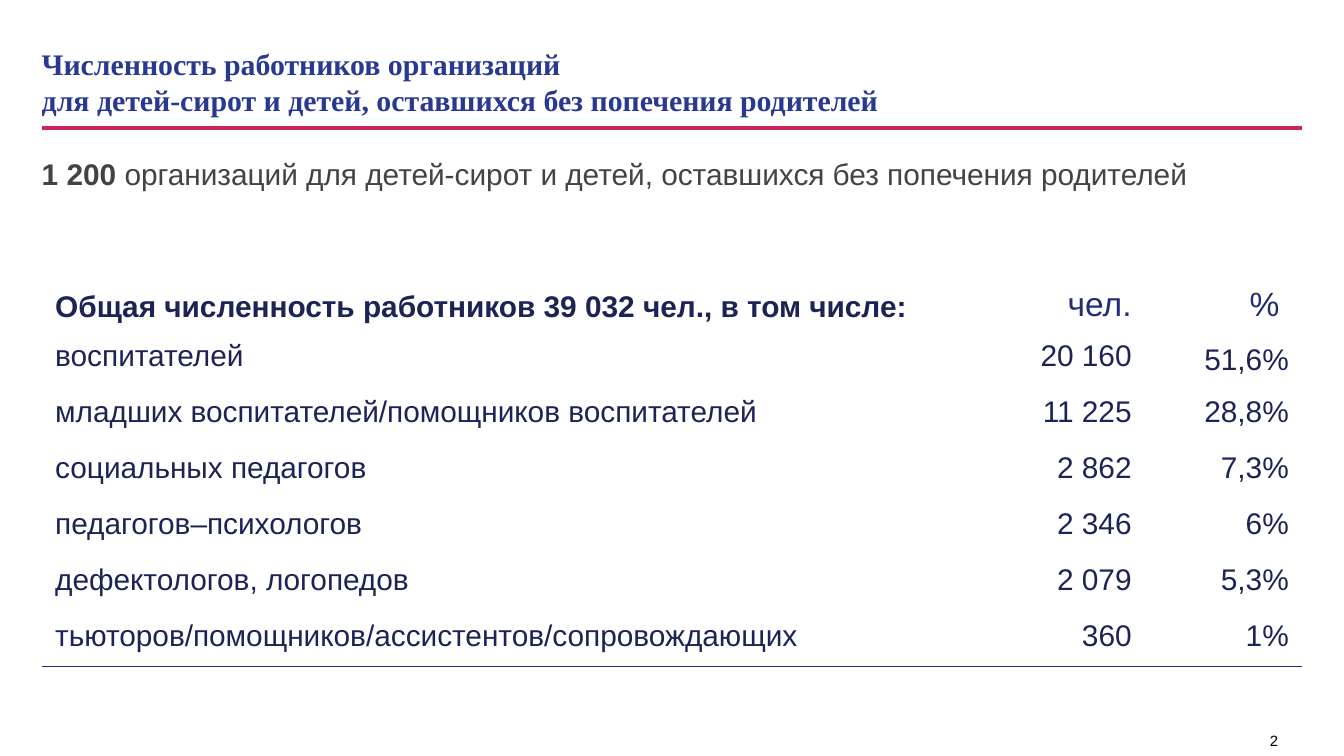
import pptx
import pptx.dml.color
import pptx.enum.shapes
import pptx.enum.text
import pptx.oxml
import pptx.oxml.ns
import pptx.util
from pptx.util import Cm

COLORS = {
    "title": "2A3990",
    "rule": "CB2458",
    "lead": "434343",
    "body": "1C2456",
    "grid": "212D74",
    "number": "000000",
}
ALIGN = pptx.enum.text.PP_ALIGN
ANCHOR = pptx.enum.text.MSO_ANCHOR

HEADER = ["Общая численность работников 39 032 чел., в том числе:", "чел.", "% "]
STAFF = [
    ("воспитателей", "20 160", "51,6%"),
    ("младших воспитателей/помощников воспитателей", "11 225", "28,8%"),
    ("социальных педагогов", "2 862", "7,3%"),
    ("педагогов–психологов", "2 346", "6%"),
    ("дефектологов, логопедов", "2 079", "5,3%"),
    ("тьюторов/помощников/ассистентов/сопровождающих", "360", "1%"),
]


def rgb(name):
    return pptx.dml.color.RGBColor.from_string(COLORS[name])


def style(font, color, size=16, bold=None, face="Arial"):
    font.name = face
    font.size = pptx.util.Pt(size)
    font.color.rgb = rgb(color)
    font.bold = bold


def add_text_frame(slide, box, inset, wrap=True):
    frame = slide.shapes.add_textbox(*box).text_frame
    frame.word_wrap = wrap
    frame.margin_left = frame.margin_right = inset
    frame.margin_top = frame.margin_bottom = inset
    return frame


def add_title(slide, left, top, width, height):
    frame = add_text_frame(slide, (left, top, width, height), 0)
    frame.vertical_anchor = ANCHOR.MIDDLE
    heading = frame.paragraphs[0]
    style(heading.font, "title", bold=True, face="Times New Roman")
    heading.add_run().text = "Численность работников организаций "
    heading.add_line_break()
    heading.add_run().text = "для детей-сирот и детей, оставшихся без попечения родителей"


def add_rule(slide, left, top, width):
    rule = slide.shapes.add_connector(
        pptx.enum.shapes.MSO_CONNECTOR.STRAIGHT, left, top, left + width, top)
    rule.line.color.rgb = rgb("rule")
    rule.line.width = pptx.util.Pt(2)
    rule._element.spPr.append(pptx.oxml.parse_xml(
        f"<a:effectLst {pptx.oxml.ns.nsdecls('a')}/>"))


def add_lead(slide, left, top, width, height):
    frame = add_text_frame(slide, (left, top, width, height), Cm(0.25))
    lead = frame.paragraphs[0]
    lead.space_after = pptx.util.Pt(8)
    style(lead.font, "lead")
    count = lead.add_run()
    count.text = "1 200 "
    count.font.bold = True
    lead.add_run().text = "организаций для детей-сирот и детей, оставшихся без попечения родителей"


def set_borders(cell, bottom_color):
    """Leave only the bottom border of the cell visible."""
    ns = pptx.oxml.ns.nsdecls("a")
    solid = f'<a:solidFill><a:srgbClr val="{bottom_color}"/></a:solidFill>'
    properties = cell._tc.get_or_add_tcPr()
    for index, side in enumerate(("lnL", "lnR", "lnT", "lnB")):
        paint = solid if side == "lnB" else "<a:noFill/>"
        properties.insert(index, pptx.oxml.parse_xml(
            f'<a:{side} {ns} w="6350">{paint}</a:{side}>'))


def fill_cell(cell, text, align, anchor, **font):
    cell.fill.background()
    set_borders(cell, COLORS["grid"])
    cell.vertical_anchor = anchor
    entry = cell.text_frame.paragraphs[0]
    entry.text = text
    entry.alignment = align
    entry.line_spacing = 1.07
    entry.space_after = pptx.util.Pt(8)
    style(entry.font, **font)


def add_staff_table(slide, left, top, width, height):
    header_height = Cm(1.93)
    rows = len(STAFF) + 1
    table = slide.shapes.add_table(rows, 3, left, top, width, height).table
    table.first_row = table.horz_banding = False
    count_width, share_width = Cm(3.18), Cm(2.97)
    widths = (width - count_width - share_width, count_width, share_width)
    for column, column_width in zip(table.columns, widths):
        column.width = column_width
    table.rows[0].height = header_height
    for index in range(1, rows):
        table.rows[index].height = (height - header_height) // len(STAFF)

    for column, text in enumerate(HEADER):
        font = {"color": "grid", "size": 18} if column else {"color": "body", "bold": True}
        fill_cell(table.cell(0, column), text,
                  ALIGN.RIGHT if column else ALIGN.LEFT, ANCHOR.BOTTOM, **font)
    for row, values in enumerate(STAFF, start=1):
        for column, text in enumerate(values):
            anchor = ANCHOR.MIDDLE if (row, column) == (1, 2) else ANCHOR.TOP
            fill_cell(table.cell(row, column), text,
                      ALIGN.RIGHT if column else ALIGN.JUSTIFY, anchor, color="body")


def add_page_number(slide, left, top, width, height):
    frame = add_text_frame(slide, (left, top, width, height), Cm(0.25), wrap=False)
    frame.margin_top = frame.margin_bottom = Cm(0.13)
    number = frame.paragraphs[0]
    number.text = "2"
    style(number.font, "number", size=8)


def main():
    deck = pptx.Presentation()
    deck.slide_width, deck.slide_height = Cm(25.4), Cm(14.29)
    slide = deck.slides.add_slide(deck.slide_layouts[6])
    margin = Cm(0.79)
    content_width = deck.slide_width - 2 * margin
    add_page_number(slide, Cm(23.75), Cm(13.69), Cm(0.86), Cm(0.6))
    add_rule(slide, margin, Cm(2.42), content_width)
    add_title(slide, margin, Cm(0.71), Cm(22.25), Cm(1.68))
    add_lead(slide, Cm(0.54), Cm(2.69), Cm(24.86), Cm(1.35))
    add_staff_table(slide, margin, Cm(4.32), content_width, Cm(8.28))
    deck.save("out.pptx")


if __name__ == "__main__":
    main()
